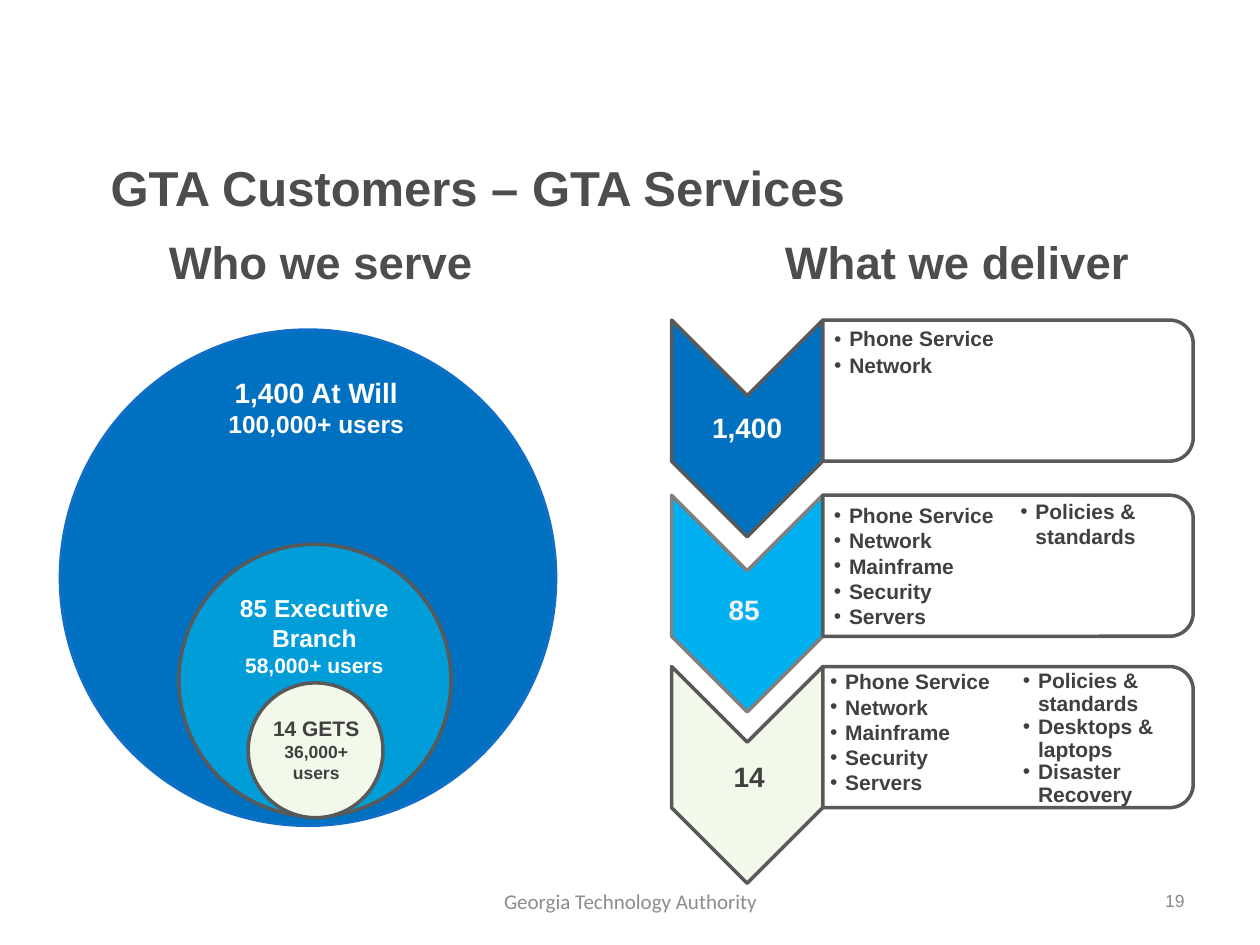
from dataclasses import dataclass

import pptx
import pptx.dml.color
import pptx.enum.shapes
import pptx.enum.text
import pptx.oxml
import pptx.oxml.ns
import pptx.util
from pptx.dml.color import RGBColor
from pptx.util import Inches

Align = pptx.enum.text.PP_ALIGN
Anchor = pptx.enum.text.MSO_ANCHOR
Preset = pptx.enum.shapes.MSO_SHAPE

WHITE = RGBColor(0xFF, 0xFF, 0xFF)
PALE_GRAY = RGBColor(0xF2, 0xF2, 0xF2)
FOOTER_GRAY = RGBColor(0x8C, 0x8C, 0x8C)
NUMBER_GRAY = RGBColor(0x89, 0x89, 0x89)
MID_GRAY = RGBColor(0x80, 0x80, 0x80)
OUTLINE = RGBColor(0x59, 0x59, 0x59)
HEADING = RGBColor(0x4D, 0x4D, 0x4D)
BODY = RGBColor(0x40, 0x40, 0x40)
BLUE = RGBColor(0x00, 0x70, 0xC0)
BLUE_EDGE = RGBColor(0x0F, 0x6F, 0xC6)
TEAL = RGBColor(0x00, 0x9D, 0xD9)
SKY = RGBColor(0x00, 0xB0, 0xF0)
MINT = RGBColor(0xF2, 0xF9, 0xEB)

STANDARD_MARGINS = (0.1, 0.05, 0.1, 0.05)
TIGHT_MARGINS = (0.01, 0.01, 0.01, 0.01)
CORE_SERVICES = ["Phone Service", "Network", "Mainframe", "Security", "Servers"]

Frame = tuple[float, float, float, float]


@dataclass
class Circle:
    frame: Frame
    fill: RGBColor
    line: RGBColor
    text_frame: Frame
    text: list[str]
    sizes: list[int]
    color: RGBColor


@dataclass
class BulletList:
    frame: Frame
    items: list[str]
    margins: Frame = STANDARD_MARGINS
    line_spacing: float | pptx.util.Pt | None = None
    space_after: int = 0


@dataclass
class ServiceRow:
    panel_top: float
    label: str
    label_frame: Frame
    label_color: RGBColor
    fill: RGBColor
    line: RGBColor
    lists: list[BulletList]


CIRCLES = [
    Circle((0.48, 2.62, 3.93, 3.93), BLUE, BLUE_EDGE, (1.37, 2.93, 2.28, 0.61),
           ["1,400 At Will", "100,000+ users"], [16, 14], WHITE),
    Circle((1.42, 4.32, 2.16, 2.16), TEAL, OUTLINE, (1.72, 4.66, 1.55, 0.77),
           ["85 Executive Branch", "58,000+ users"], [14, 12], WHITE),
    Circle((1.97, 5.42, 1.07, 1.07), MINT, OUTLINE, (1.96, 5.63, 1.1, 0.64),
           ["14 GETS", "36,000+ users"], [12, 10], BODY),
]

ROWS = [
    ServiceRow(1.63, "1,400", (5.33, 3.15, 1.2, 0.52), WHITE, BLUE, OUTLINE, [
        BulletList((6.53, 2.6, 2.89, 1.01), CORE_SERVICES[:2],
                   (0.09, 0.01, 0.01, 0.01), 0.9, 2),
    ]),
    ServiceRow(3.02, "85", (5.36, 4.59, 1.09, 0.52), PALE_GRAY, SKY, MID_GRAY, [
        BulletList((6.52, 3.94, 1.73, 1.11), CORE_SERVICES),
        BulletList((8, 3.91, 1.56, 0.74), ["Policies & standards"]),
    ]),
    ServiceRow(4.38, "14", (5.4, 5.92, 1.09, 0.52), BODY, MINT, OUTLINE, [
        BulletList((6.49, 5.26, 1.73, 1.11), CORE_SERVICES),
        BulletList((8.02, 5.27, 1.75, 1.19),
                   ["Policies & standards", "Desktops & laptops", "Disaster Recovery"],
                   line_spacing=pptx.util.Pt(13)),
    ]),
]


def add_bullet(para) -> None:
    properties = para._p.get_or_add_pPr()
    properties.set("marL", str(Inches(0.12)))
    properties.set("indent", str(Inches(-0.12)))
    namespace = pptx.oxml.ns.nsdecls("a")
    properties.append(pptx.oxml.parse_xml(f'<a:buFont {namespace} typeface="Arial"/>'))
    properties.append(pptx.oxml.parse_xml(f'<a:buChar {namespace} char="•"/>'))


def add_text(page, frame: Frame, lines: list[str], *, sizes: list[int], color: RGBColor,
             font: str = "Arial", bold: bool = True, align=Align.LEFT, anchor=Anchor.TOP,
             margins: Frame = STANDARD_MARGINS, bullets: bool = False,
             line_spacing=None, space_after: int = 0) -> None:
    """Add a text box with one paragraph for each line and its size."""
    box = page.shapes.add_textbox(*map(Inches, frame)).text_frame
    box.word_wrap = True
    box.vertical_anchor = anchor
    box.margin_left, box.margin_top, box.margin_right, box.margin_bottom = map(Inches, margins)
    for index, (line, size) in enumerate(zip(lines, sizes)):
        para = box.add_paragraph() if index else box.paragraphs[0]
        if bullets:
            add_bullet(para)
        para.alignment = align
        if line_spacing:
            para.line_spacing = line_spacing
        if space_after:
            para.space_after = pptx.util.Pt(space_after)
        span = para.add_run()
        span.text = line
        span.font.name = font
        span.font.size = pptx.util.Pt(size)
        span.font.bold = bold
        span.font.color.rgb = color


def add_outline(page, preset, frame: Frame, fill: RGBColor, line: RGBColor,
                rotation: float = 0) -> None:
    shape = page.shapes.add_shape(preset, *map(Inches, frame))
    shape.shadow.inherit = False
    shape.rotation = rotation
    shape.fill.solid()
    shape.fill.fore_color.rgb = fill
    shape.line.color.rgb = line
    shape.line.width = pptx.util.Pt(2)


def draw_circle(page, circle: Circle) -> None:
    add_outline(page, Preset.OVAL, circle.frame, circle.fill, circle.line)
    add_text(page, circle.text_frame, circle.text, sizes=circle.sizes,
             color=circle.color, align=Align.CENTER)


def draw_row(page, row: ServiceRow) -> None:
    add_outline(page, Preset.CHEVRON, (5.07, row.panel_top + 1.17, 1.72, 1.2),
                row.fill, row.line, rotation=90)
    add_text(page, row.label_frame, [row.label], sizes=[16], color=row.label_color,
             align=Align.CENTER, anchor=Anchor.MIDDLE, margins=TIGHT_MARGINS,
             line_spacing=0.9, space_after=6)
    add_outline(page, Preset.ROUND_2_SAME_RECTANGLE, (7.44, row.panel_top, 1.12, 2.94),
                WHITE, OUTLINE, rotation=90)
    for services in row.lists:
        add_text(page, services.frame, services.items, sizes=[12] * len(services.items),
                 color=BODY, margins=services.margins, bullets=True,
                 line_spacing=services.line_spacing, space_after=services.space_after)


def main() -> None:
    deck = pptx.Presentation()
    deck.slide_width, deck.slide_height = Inches(10), Inches(7.5)
    page = deck.slides.add_slide(deck.slide_layouts[6])

    add_text(page, (0.78, 0.97, 7.33, 0.83), ["GTA Customers – GTA Services"], sizes=[28],
             color=HEADING, anchor=Anchor.MIDDLE, margins=(0.1, 0.25, 0.1, 0.05))
    add_text(page, (0.64, 1.81, 3.81, 0.62), ["Who we serve"], sizes=[26],
             color=HEADING, align=Align.CENTER)
    add_text(page, (5.65, 1.81, 3.89, 0.57), ["What we deliver"], sizes=[26],
             color=HEADING, align=Align.CENTER)
    for circle in CIRCLES:
        draw_circle(page, circle)
    for row in ROWS:
        draw_row(page, row)
    add_text(page, (3.42, 6.95, 3.17, 0.4), ["Georgia Technology Authority"], sizes=[12],
             color=FOOTER_GRAY, font="Calibri", bold=False, align=Align.CENTER,
             anchor=Anchor.MIDDLE)
    add_text(page, (7.17, 6.95, 2.33, 0.4), ["19"], sizes=[10], color=NUMBER_GRAY,
             bold=False, align=Align.RIGHT, anchor=Anchor.MIDDLE)
    deck.save("out.pptx")


if __name__ == "__main__":
    main()
